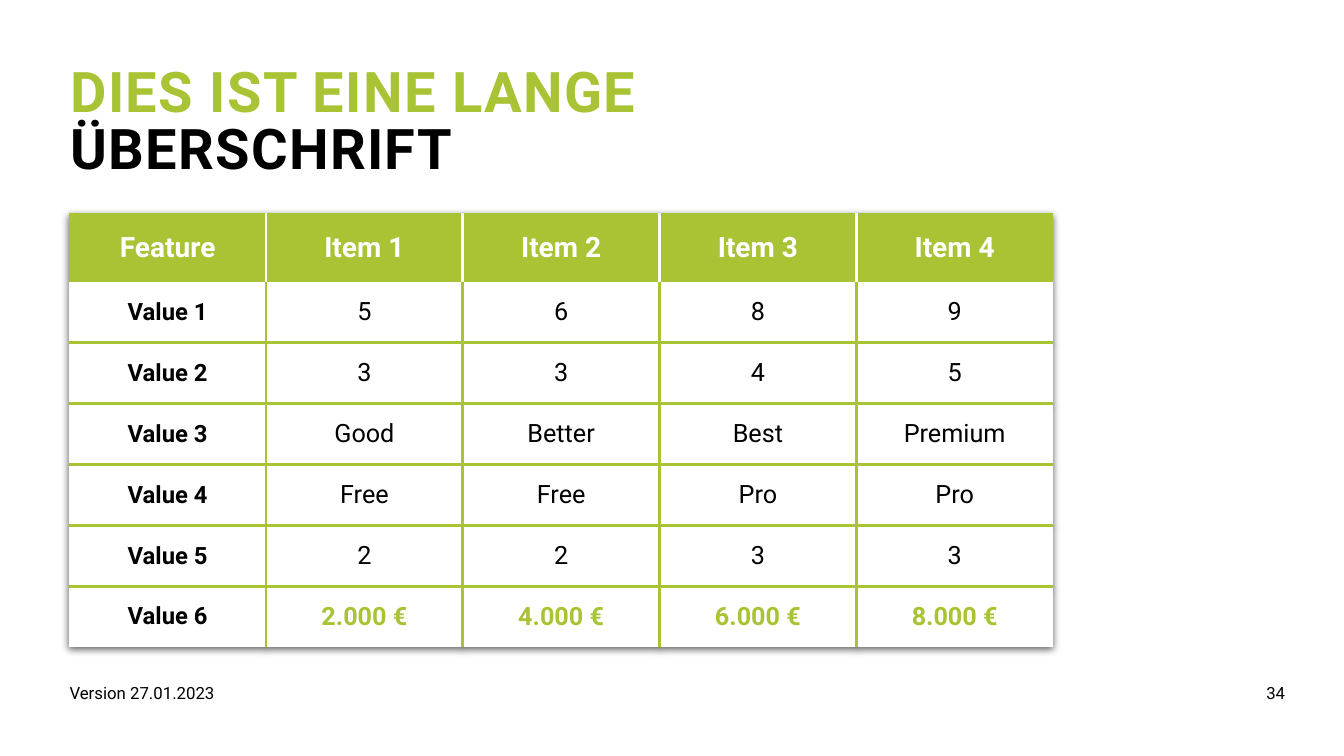
from lxml import etree
from pptx import Presentation
from pptx.dml.color import RGBColor
from pptx.enum.text import MSO_ANCHOR as Anchor, PP_ALIGN as Align
from pptx.oxml import parse_xml
from pptx.oxml.ns import nsdecls, qn
from pptx.util import Pt

GREEN, BLACK, WHITE = "A8C434", "000000", "FFFFFF"
HEADER_HEIGHT, ROW_HEIGHT, COLUMN_WIDTH = 49, 43.5, 140.55
BORDER_WIDTH = 2.25
ROWS = [
    ["Feature", "Item 1", "Item 2", "Item 3", "Item 4"],
    ["Value 1", "5", "6", "8", "9"],
    ["Value 2", "3", "3", "4", "5"],
    ["Value 3", "Good", "Better", "Best", "Premium"],
    ["Value 4", "Free", "Free", "Pro", "Pro"],
    ["Value 5", "2", "2", "3", "3"],
    ["Value 6", "2.000 €", "4.000 €", "6.000 €", "8.000 €"],
]


def rgb(color):
    return RGBColor.from_string(color)


def add_run(paragraph, text, size=12, color=BLACK, bold=False, spacing=0):
    run = paragraph.add_run()
    run.text = text
    run.font.name = "Roboto"
    run.font.size = Pt(size)
    run.font.bold = bold
    run.font.color.rgb = rgb(color)
    if spacing:
        run._r.get_or_add_rPr().set("spc", str(spacing * 100))


def add_text_box(slide, left, top, width, height, align=Align.LEFT):
    """Add a wrapping box without margins and return its paragraph."""
    box = slide.shapes.add_textbox(Pt(left), Pt(top), Pt(width), Pt(height))
    frame = box.text_frame
    frame.word_wrap = True
    frame.margin_left = frame.margin_right = frame.margin_top = frame.margin_bottom = 0
    paragraph = frame.paragraphs[0]
    paragraph.alignment = align
    return paragraph


def set_border(cell, side, color):
    """Draw one side (L, R, T or B) of a cell; no colour means no line."""
    properties = cell._tc.get_or_add_tcPr()
    line = etree.SubElement(properties, qn(f"a:ln{side}"), w=str(Pt(BORDER_WIDTH)))
    if color:
        fill = etree.SubElement(line, qn("a:solidFill"))
        etree.SubElement(fill, qn("a:srgbClr"), val=color)
    else:
        etree.SubElement(line, qn("a:noFill"))


def add_shadow(table):
    table._tbl.tblPr.insert(0, parse_xml(
        f'<a:effectLst {nsdecls("a")}>'
        f'<a:outerShdw blurRad="{Pt(5)}" dist="{Pt(2)}" dir="5400000">'
        '<a:srgbClr val="000000"><a:alpha val="60000"/></a:srgbClr>'
        '</a:outerShdw></a:effectLst>'))


def cell_format(row, column):
    if row == 0:
        return dict(size=20, color=WHITE, bold=True)
    if column == 0:
        return dict(size=17, bold=True)
    if row == len(ROWS) - 1:
        return dict(size=18, color=GREEN, bold=True)
    return dict(size=18)


def format_cell(cell, row, column):
    is_header = row == 0
    last_row, last_column = len(ROWS) - 1, len(ROWS[0]) - 1
    divider = WHITE if is_header else GREEN
    set_border(cell, "L", divider if column > 0 else None)
    set_border(cell, "R", divider if column < last_column else None)
    set_border(cell, "T", GREEN if row > 1 else None)
    set_border(cell, "B", GREEN if 0 < row < last_row else None)
    cell.fill.solid()
    cell.fill.fore_color.rgb = rgb(GREEN if is_header else WHITE)
    cell.vertical_anchor = Anchor.MIDDLE
    cell.margin_left = cell.margin_right = Pt(14.4)
    cell.margin_top = cell.margin_bottom = 0


def add_feature_table(slide, left, top):
    row_count, column_count = len(ROWS), len(ROWS[0])
    height = HEADER_HEIGHT + ROW_HEIGHT * (row_count - 1)
    table = slide.shapes.add_table(
        row_count, column_count, Pt(left), Pt(top),
        Pt(COLUMN_WIDTH * column_count), Pt(height)).table
    table.first_row = table.horz_banding = False
    add_shadow(table)
    for column in table.columns:
        column.width = Pt(COLUMN_WIDTH)
    for row_index, values in enumerate(ROWS):
        table.rows[row_index].height = Pt(ROW_HEIGHT if row_index else HEADER_HEIGHT)
        for column_index, value in enumerate(values):
            cell = table.cell(row_index, column_index)
            format_cell(cell, row_index, column_index)
            paragraph = cell.text_frame.paragraphs[0]
            paragraph.alignment = Align.CENTER
            add_run(paragraph, value, **cell_format(row_index, column_index))


def main():
    presentation = Presentation()
    presentation.slide_width, presentation.slide_height = Pt(960), Pt(540)
    slide = presentation.slides.add_slide(presentation.slide_layouts[6])

    add_run(add_text_box(slide, 763.2, 487.5, 154.8, 28.8, Align.RIGHT), "34")
    add_run(add_text_box(slide, 49.7, 487.5, 592.6, 28.8), "Version 27.01.2023")

    title = add_text_box(slide, 50.4, 47.5, 590.4, 80.6)
    title.line_spacing = 0.85
    add_run(title, "DIES IST EINE LANGE ", size=40, color=GREEN, bold=True, spacing=1)
    add_run(title, "ÜBERSCHRIFT", size=40, bold=True, spacing=1)

    add_feature_table(slide, 49.5, 152.4)
    presentation.save("out.pptx")


if __name__ == "__main__":
    main()
